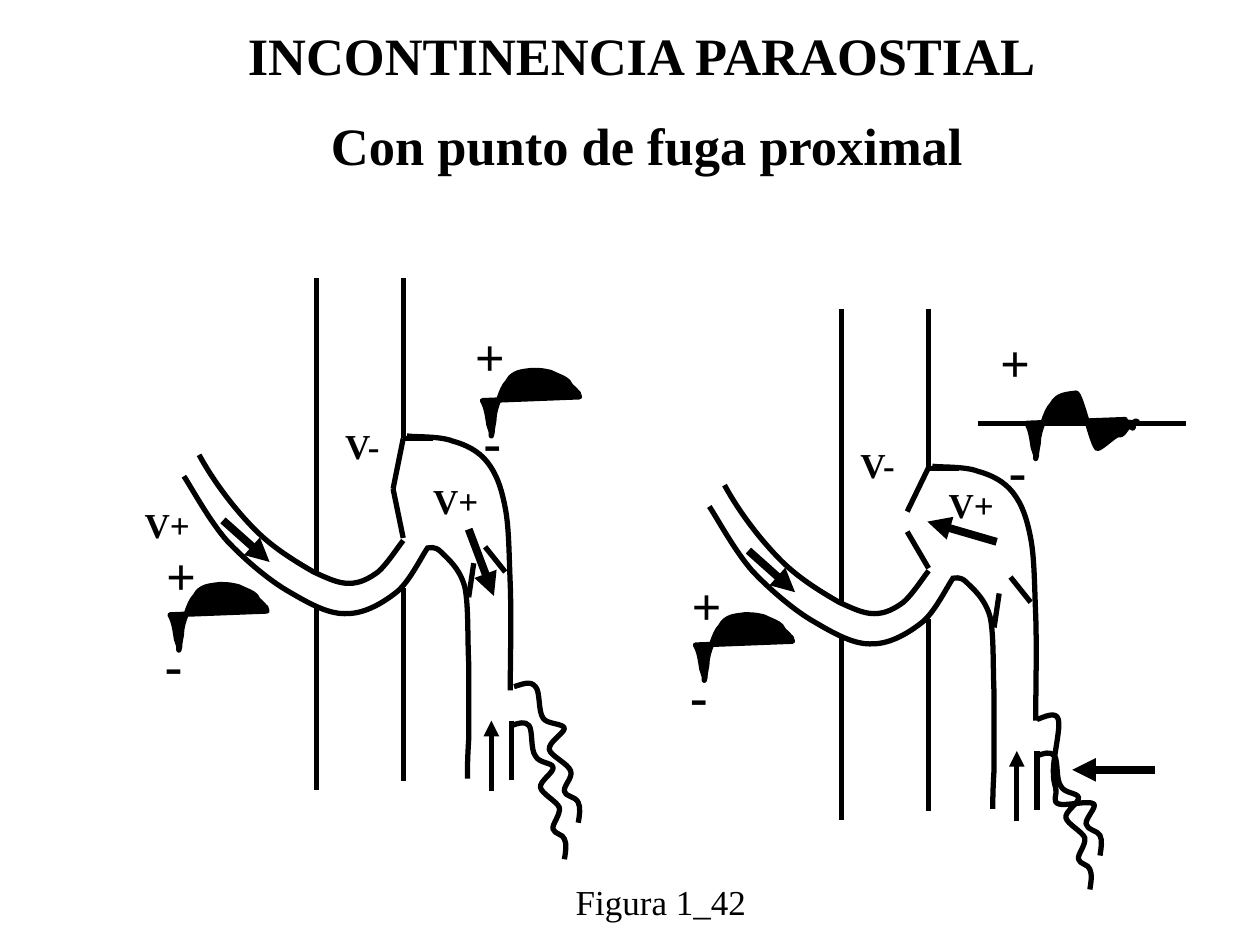
from dataclasses import dataclass

from lxml.etree import SubElement
from pptx import Presentation
from pptx.dml.color import RGBColor
from pptx.enum.shapes import MSO_CONNECTOR as Connector
from pptx.enum.text import MSO_AUTO_SIZE as AutoSize, PP_ALIGN as Align
from pptx.oxml.ns import qn
from pptx.util import Inches, Pt


@dataclass(frozen=True)
class Theme:
    ink: RGBColor = RGBColor(0, 0, 0)
    font: str = "Times New Roman"
    large: int = 30
    small: int = 20
    thin: float = 3
    thick: float = 4.5


theme = Theme()
COLUMNS, ROWS = 1000, 750

deck = Presentation()
deck.slide_width, deck.slide_height = Inches(10), Inches(7.5)
slide = deck.slides.add_slide(deck.slide_layouts[6])
column, row = deck.slide_width // COLUMNS, deck.slide_height // ROWS


def write(left, top, width, height, paragraphs, size, bold=True, centred=False):
    box = slide.shapes.add_textbox(left * column, top * row, width * column, height * row)
    frame = box.text_frame
    frame.word_wrap = centred
    frame.auto_size = AutoSize.NONE
    for index, wording in enumerate(paragraphs):
        paragraph = frame.add_paragraph() if index else frame.paragraphs[0]
        paragraph.alignment = Align.CENTER if centred else Align.LEFT
        if index:
            paragraph.space_before = Pt(16)
        run = paragraph.add_run()
        run.text = wording
        run.font.name, run.font.size, run.font.bold = theme.font, Pt(size), bold
        run.font.color.rgb = theme.ink


def trace(points, dx=0, dy=0, filled=False):
    spots = [(x + dx, y + dy) for x, y in points]
    builder = slide.shapes.build_freeform(*spots[0], scale=(column, row))
    builder.add_line_segments(spots[1:], close=filled)
    curve = builder.convert_to_shape()
    outline = curve._element.spPr.find(".//" + qn("a:path"))
    segments = outline.findall(qn("a:lnTo"))
    for bend, middle, end in zip(segments[::3], segments[1::3], segments[2::3]):
        bend.tag = qn("a:cubicBezTo")
        for segment in (middle, end):
            bend.append(segment[0])
            outline.remove(segment)
    curve.shadow.inherit = False
    curve.line.color.rgb, curve.line.width = theme.ink, Pt(theme.thin)
    if filled:
        curve.fill.solid()
        curve.fill.fore_color.rgb = theme.ink
    else:
        curve.fill.background()


vein_curves = [
    [(323, 346), (329, 347), (349, 346), (359, 350), (370, 353), (380, 358), (387, 367),
     (394, 376), (398, 387), (401, 403), (404, 418), (404, 439), (405, 463),
     (406, 487), (405, 534), (405, 548)],
    [(339, 435), (341, 435), (345, 433), (350, 438), (355, 443), (365, 451), (369, 466),
     (372, 481), (371, 506), (372, 526), (372, 546), (372, 572), (372, 587),
     (371, 603), (371, 612), (371, 618)],
    [(158, 361), (170, 383), (187, 405), (203, 421), (218, 436), (237, 447), (249, 454),
     (262, 460), (269, 463), (277, 463), (286, 463), (293, 459), (300, 454),
     (307, 448), (316, 434), (320, 429)],
    [(146, 378), (152, 387), (166, 413), (180, 429), (194, 444), (214, 461), (230, 470),
     (247, 480), (262, 488), (276, 487), (290, 487), (305, 478), (316, 469),
     (326, 460), (335, 441), (340, 434)],
    [(406, 576), (411, 574), (417, 572), (420, 576), (423, 580), (421, 595), (425, 600),
     (428, 606), (438, 605), (439, 609), (440, 613), (428, 620), (429, 625),
     (430, 630), (442, 636), (444, 641), (445, 647), (438, 654), (439, 658),
     (440, 662), (447, 662), (448, 666), (450, 670), (449, 676), (448, 682)],
]
open_varix = [
    (408, 545), (415, 543), (421, 540), (425, 545), (429, 549), (427, 564), (431, 570),
    (434, 575), (447, 574), (448, 578), (448, 582), (435, 589), (436, 595),
    (437, 600), (451, 606), (453, 612), (455, 617), (447, 624), (448, 628),
    (448, 632), (457, 632), (459, 637), (461, 641), (460, 647), (459, 653)]
pressed_varix = [
    (823, 571), (829, 569), (838, 564), (840, 571), (842, 577), (836, 601), (836, 611),
    (836, 620), (837, 622), (838, 626), (839, 631), (835, 636), (840, 638),
    (845, 640), (864, 635), (868, 638), (871, 640), (861, 650), (862, 654),
    (863, 659), (871, 659), (873, 663), (875, 667), (874, 673), (873, 679)]
wave_start = [
    (0, 24), (3, 29), (4, 36), (5, 43), (6, 45), (6, 47), (7, 49), (7, 50), (7, 52),
    (7, 52), (9, 44), (6, 56), (9, 40), (9, 34), (11, 28), (13, 23),
    (15, 17), (17, 12), (20, 9), (24, 1), (32, 1), (39, 0)]
single_wave = wave_start + [
    (43, 0), (47, 0), (51, 1), (53, 1), (55, 2), (57, 3), (61, 5), (65, 6), (68, 9),
    (71, 14), (69, 11), (74, 16), (74, 17), (76, 18), (76, 18), (76, 19), (77, 21), (77, 21)]
double_wave = wave_start + [
    (43, 0), (52, 43), (56, 44), (59, 44), (71, 32), (73, 33), (77, 35), (80, 23), (83, 27),
    (86, 31), (83, 19), (88, 23), (88, 24), (78, 23), (78, 23), (78, 24), (78, 21), (78, 21)]

vein_lines = [
    (251, 221, 251, 454), (251, 481, 251, 627), (320, 221, 320, 348), (320, 467, 320, 620),
    (320, 348, 344, 348), (372, 474, 376, 447), (401, 454, 385, 434), (406, 572, 406, 619)]
flow_arrows = [(177, 413, 214, 446, theme.thick), (390, 628, 390, 572, theme.thin)]

lines = [(*ends, theme.thin, False) for ends in [
    (320, 427, 312, 388), (320, 348, 312, 388),
    (737, 451, 720, 422), (737, 371, 720, 406), (776, 336, 941, 336)]]
lines += [(*ends, theme.thick, True) for ends in [
    (372, 420, 392, 473), (791, 430, 736, 414), (917, 611, 851, 611)]]
minuses = [(374, 320), (791, 343)]
pluses = [(367, 252), (784, 257)]

for dx, dy in [(0, 0), (417, 24)]:
    for points in vein_curves:
        trace(points, dx, dy)
    trace(single_wave, 135 + dx, 464 + dy, filled=True)
    minuses.append((121 + dx, 497 + dy))
    pluses.append((122 + dx, 426 + dy))
    lines += [(a + dx, b + dy, c + dx, d + dy, theme.thin, False) for a, b, c, d in vein_lines]
    lines += [(a + dx, b + dy, c + dx, d + dy, w, True) for a, b, c, d, w in flow_arrows]

trace(open_varix)
trace(pressed_varix)
trace(single_wave, 383, 294, filled=True)
trace(double_wave, 815, 312, filled=True)

for x1, y1, x2, y2, weight, pointed in lines:
    stroke = slide.shapes.add_connector(
        Connector.STRAIGHT, x1 * column, y1 * row, x2 * column, y2 * row)
    stroke.line.color.rgb, stroke.line.width = theme.ink, Pt(weight)
    if pointed:
        SubElement(stroke.line._get_or_add_ln(), qn("a:tailEnd"), type="triangle")
    SubElement(stroke._element.spPr, qn("a:effectLst"))

write(106, 13, 815, 300, ["INCONTINENCIA PARAOSTIAL ", "Con punto de fuga proximal"],
      theme.large, centred=True)
for sign, width, spots, height, size in [
        ("-", 34, minuses, 60, theme.large),
        ("+", 44, pluses, 60, theme.large),
        ("V-", 49, [(264, 332), (673, 347)], 43, theme.small),
        ("V+", 56, [(105, 395), (334, 376), (743, 379)], 43, theme.small)]:
    for left, top in spots:
        write(left, top, width, height, [sign], size)
write(447, 694, 155, 43, ["Figura 1_42"], theme.small, bold=False)

deck.save("out.pptx")
